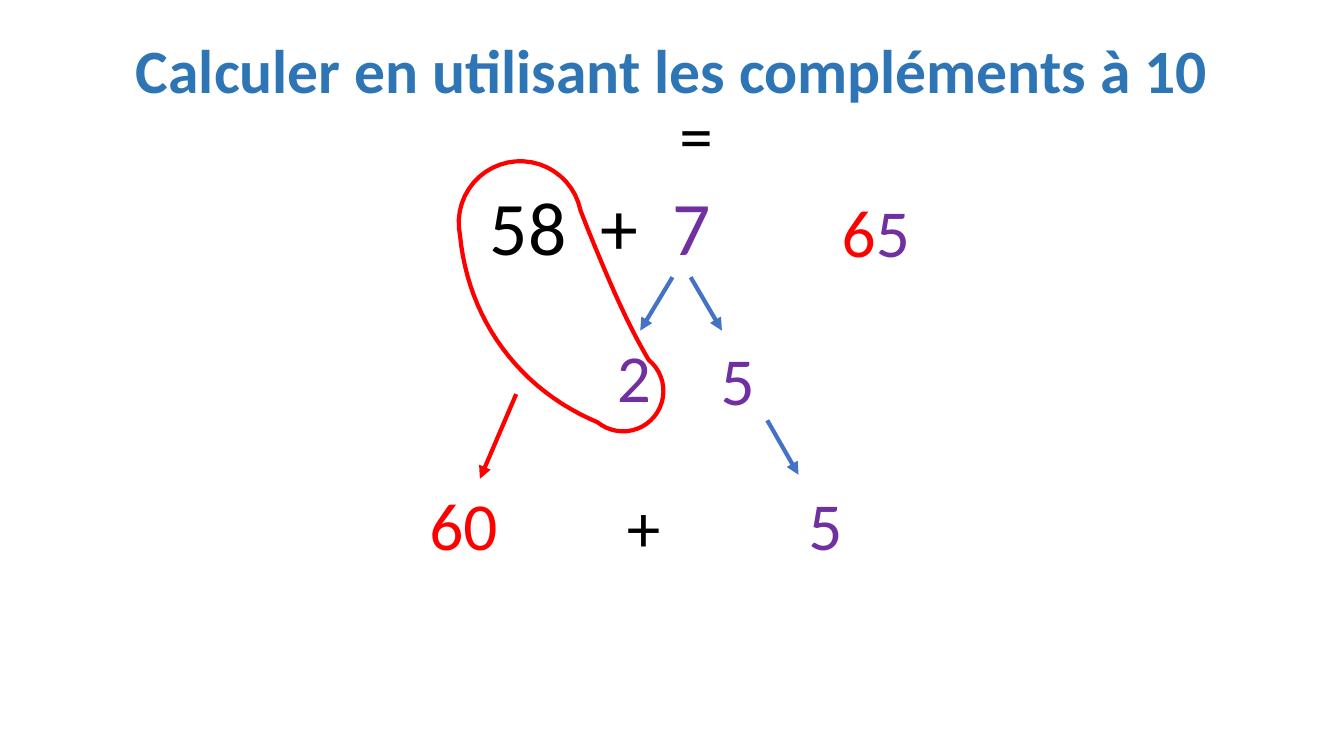
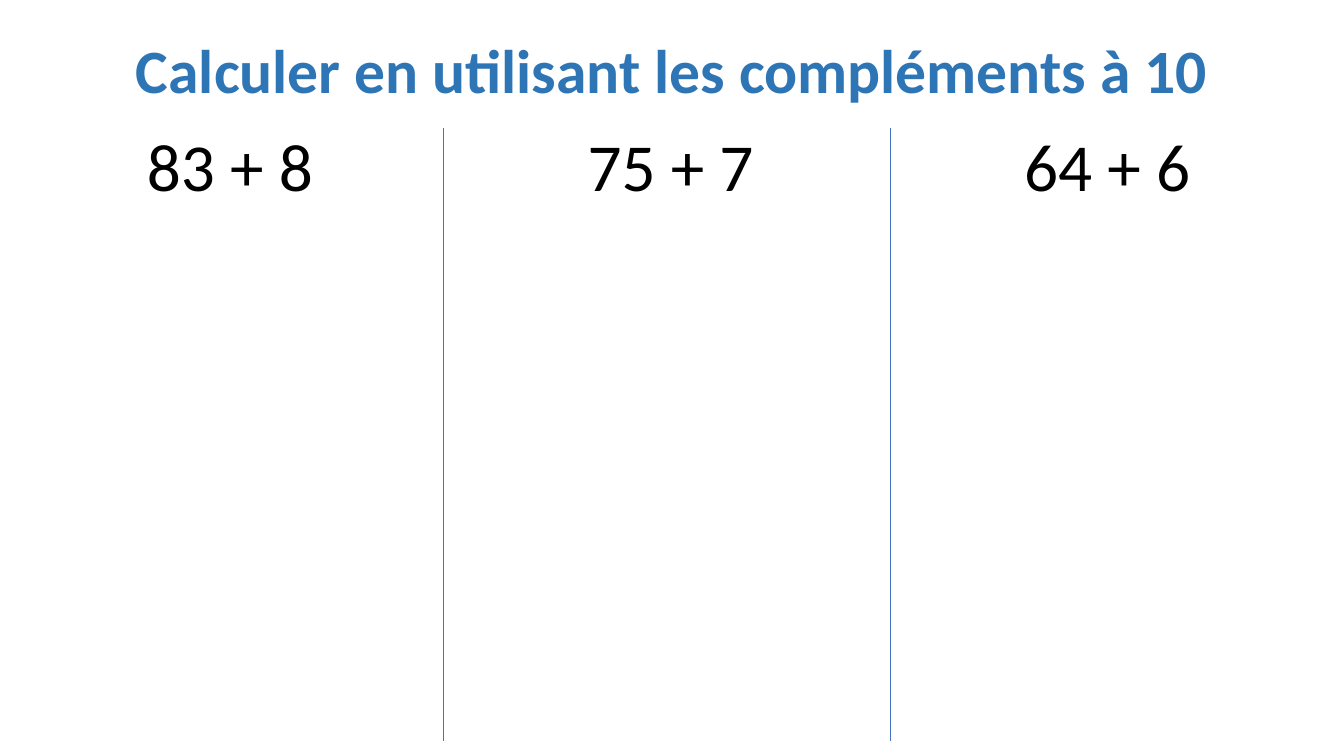
from math import atan2, cos, radians, sin

from lxml import etree
from pptx import Presentation
from pptx.dml.color import RGBColor
from pptx.enum import shapes, text
from pptx.oxml import ns
from pptx.util import Inches, Pt

BLACK = RGBColor(0x00, 0x00, 0x00)
RED = RGBColor(0xFF, 0x00, 0x00)
PURPLE = RGBColor(0x70, 0x30, 0xA0)
BLUE = RGBColor(0x44, 0x72, 0xC4)
NAVY = RGBColor(0x2E, 0x75, 0xB6)
FONT = "Calibri"
TITLE = "Calculer en utilisant les compléments à 10"
THICK, THIN = 3, 0.5
WIDE_GAP = "1220"


def write(slide, left, top, width, parts, size=48, height=0.91, wrap=False):
    box = slide.shapes.add_textbox(Inches(left), Inches(top), Inches(width), Inches(height))
    box.text_frame.word_wrap = wrap
    line = box.text_frame.paragraphs[0]
    for words, color in parts:
        run = line.add_run()
        run.text = words
        run.font.name = FONT
        run.font.size = Pt(size)
        run.font.color.rgb = color
        if words == " ":
            run.font._element.set("spc", WIDE_GAP)


def draw(slide, start, end, color, width, arrow=False):
    points = [Inches(value) for value in start + end]
    line = slide.shapes.add_connector(shapes.MSO_CONNECTOR.STRAIGHT, *points)
    line.line.color.rgb = color
    line.line.width = Pt(width)
    if arrow:
        etree.SubElement(line.line._get_or_add_ln(), ns.qn("a:tailEnd"), type="triangle")
    etree.SubElement(line._element.spPr, ns.qn("a:effectLst"))


deck = Presentation()
deck.slide_width = Inches(13.33)
deck.slide_height = Inches(7.5)

slides = []
for number in range(2):
    slide = deck.slides.add_slide(deck.slide_layouts[5])
    title = slide.shapes.title
    title.left, title.top = Inches(0.92), Inches(0)
    title.width, title.height = Inches(11.5), Inches(1.45)
    frame = title.text_frame
    frame.text = TITLE
    frame.word_wrap = True
    frame.auto_size = text.MSO_AUTO_SIZE.NONE
    frame.vertical_anchor = text.MSO_ANCHOR.MIDDLE
    head = frame.paragraphs[0]
    head.alignment = text.PP_ALIGN.CENTER
    head.line_spacing = 0.9
    font = head.runs[0].font
    font.name, font.size, font.bold = FONT, Pt(44), True
    font.color.rgb = NAVY
    slides.append(slide)

model, drill = slides

terms = [("58", BLACK), (" ", BLACK), ("+", BLACK), (" ", BLACK), ("7", PURPLE)]
write(model, 4.76, 1.74, 2.59, terms, size=54, height=1.01, wrap=True)
write(model, 6.64, 0.88, 0.84, [("=", BLACK)], wrap=True)
write(model, 8.25, 1.84, 1.15, [("6", RED), ("5", PURPLE)], wrap=True)

for left, top, width, words, color in [
    (6.02, 3.28, 0.54, "2", PURPLE),
    (7.05, 3.31, 0.54, "5", PURPLE),
    (4.16, 4.75, 0.89, "60", RED),
    (6.12, 4.77, 0.54, "+", BLACK),
    (7.92, 4.75, 0.54, "5", PURPLE),
]:
    write(model, left, top, width, [(words, color)])

for start, end, color in [
    ((6.67, 2.75), (6.35, 3.28), BLUE),
    ((6.85, 2.75), (7.16, 3.28), BLUE),
    ((7.61, 4.17), (7.92, 4.71), BLUE),
    ((5.12, 3.91), (4.76, 4.75), RED),
]:
    draw(model, start, end, color, THICK, arrow=True)

top_x, top_y, top_size = 5.16, 2.21, 0.61
bend_x, bend_y, bulge = 5.37, 3.22, 0.48
low_x, low_y, low_size = 6.18, 3.88, 0.4

steps = [step / 24 for step in range(24)]
right = [(step, -90) for step in steps]
base = [(1, 180 * step - 90) for step in steps]
back = [(1 - step, 90) for step in steps]
crown = [(0, 180 * step + 90) for step in steps]

loop = []
for along, turn in right + base + back + crown:
    rest = 1 - along
    x = rest**2 * top_x + 2 * rest * along * bend_x + along**2 * low_x
    y = rest**2 * top_y + 2 * rest * along * bend_y + along**2 * low_y
    run_x = rest * (bend_x - top_x) + along * (low_x - bend_x)
    run_y = rest * (bend_y - top_y) + along * (low_y - bend_y)
    size = rest * top_size + along * low_size + bulge * rest * along
    angle = atan2(run_y, run_x) + radians(turn)
    loop.append((Inches(x + size * cos(angle)), Inches(y + size * sin(angle))))

pen = model.shapes.build_freeform(*loop[0])
pen.add_line_segments(loop[1:], close=True)
ring = pen.convert_to_shape()
ring.shadow.inherit = False
ring.fill.background()
ring.line.color.rgb = RED
ring.line.width = Pt(THICK)

for left in (4.4, 8.83):
    draw(drill, (left, 1.27), (left, 7.35), BLUE, THIN)

for left, words in [(1.36, "83 + 8"), (5.73, "75 + 7"), (10.06, "64 + 6")]:
    write(drill, left, 1.18, 1.87, [(words, BLACK)])

deck.save("out.pptx")
